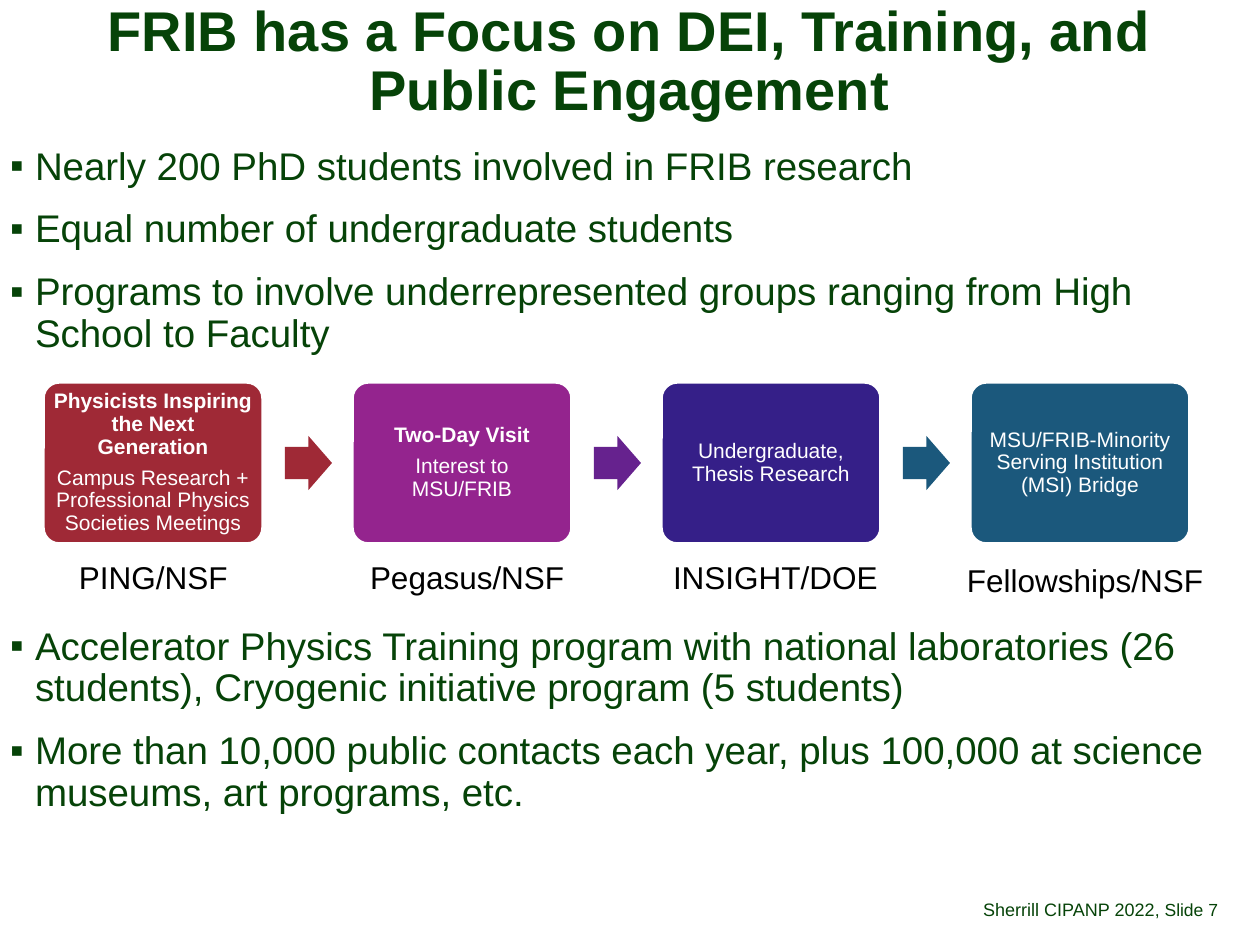
from dataclasses import dataclass

from lxml import etree
from pptx import Presentation
from pptx.dml.color import RGBColor
from pptx.enum.shapes import MSO_SHAPE
from pptx.enum.text import MSO_ANCHOR, MSO_AUTO_SIZE, PP_ALIGN
from pptx.oxml.ns import qn
from pptx.util import Emu, Pt

LEFT, CENTER, RIGHT = PP_ALIGN.LEFT, PP_ALIGN.CENTER, PP_ALIGN.RIGHT
TOP, MIDDLE, BOTTOM = MSO_ANCHOR.TOP, MSO_ANCHOR.MIDDLE, MSO_ANCHOR.BOTTOM
ROUND_RECT, RIGHT_ARROW = MSO_SHAPE.ROUNDED_RECTANGLE, MSO_SHAPE.RIGHT_ARROW
NO_FIT = MSO_AUTO_SIZE.NONE

COLORS = {
    "green": "064308",
    "white": "FFFFFF",
    "black": "000000",
    "red": "9F2936",
    "magenta": "94248E",
    "purple": "66228E",
    "indigo": "351F88",
    "blue": "1B587C",
}
FONT = "Arial"
PX_PER_INCH = 126
STAGE_LEFT, STAGE_TOP, STAGE_W, STAGE_H, STAGE_PITCH = 43, 382, 220, 162, 309
ARROW_OFFSET, ARROW_W, ARROW_H = 242, 47, 54
BULLET_INDENT = 25


@dataclass
class Box:
    x: int
    y: int
    w: int
    h: int


@dataclass
class Stage:
    heading: str
    detail: str
    color: str
    label: str
    label_box: Box
    arrow_color: str = ""


STAGES = [
    Stage("Physicists Inspiring the Next Generation",
          "Campus Research + Professional Physics Societies Meetings",
          "red", "PING/NSF", Box(66, 552, 175, 50), "red"),
    Stage("Two-Day Visit", "Interest to MSU/FRIB",
          "magenta", "Pegasus/NSF", Box(357, 552, 222, 50), "purple"),
    Stage("", "Undergraduate, Thesis Research",
          "indigo", "INSIGHT/DOE", Box(660, 552, 232, 50), "blue"),
    Stage("", "MSU/FRIB-Minority Serving Institution (MSI) Bridge",
          "blue", "Fellowships/NSF", Box(954, 555, 265, 50)),
]
UPPER_POINTS = [
    "Nearly 200 PhD students involved in FRIB research",
    "Equal number of undergraduate students",
    "Programs to involve underrepresented groups ranging from High School to Faculty",
]
LOWER_POINTS = [
    "Accelerator Physics Training program with national laboratories "
    "(26 students), Cryogenic initiative program (5 students)",
    "More than 10,000 public contacts each year, plus 100,000 at science "
    "museums, art programs, etc.",
]


def px(n: float) -> Emu:
    return Emu(round(n * 914400 / PX_PER_INCH))


def rgb(name: str) -> RGBColor:
    return RGBColor.from_string(COLORS[name])


def add_bullet(p) -> None:
    pPr = p._p.get_or_add_pPr()
    pPr.set("marL", str(px(BULLET_INDENT)))
    pPr.set("indent", str(-px(BULLET_INDENT)))
    etree.SubElement(pPr, qn("a:buFont"), typeface=FONT)
    etree.SubElement(pPr, qn("a:buChar"), char="▪")


def write(tf, lines: list[str], *, size: float, color: str = "green",
          bold_lines: int = 0, align=LEFT, anchor=TOP, spacing: float = 0.9,
          gap: float = 0, inset: tuple[int, int] = (0, 0),
          wrap: bool = True, bullets: bool = False) -> None:
    tf.word_wrap, tf.auto_size, tf.vertical_anchor = wrap, NO_FIT, anchor
    tf.margin_left = tf.margin_right = px(inset[0])
    tf.margin_top = tf.margin_bottom = px(inset[1])
    for i, line in enumerate(lines):
        p = tf.add_paragraph() if i else tf.paragraphs[0]
        p.alignment, p.line_spacing = align, spacing
        p.space_before = Pt(gap if i else 0)
        if bullets:
            add_bullet(p)
        r = p.add_run()
        r.text = line
        r.font.name, r.font.size = FONT, Pt(size)
        r.font.bold = i < bold_lines
        r.font.color.rgb = rgb(color)


def add_text(s, box: Box, lines: list[str], **fmt) -> None:
    sp = s.shapes.add_textbox(px(box.x), px(box.y), px(box.w), px(box.h))
    write(sp.text_frame, lines, **fmt)


def add_filled(s, kind, box: Box, color: str, adjustments: list[float]):
    sp = s.shapes.add_shape(kind, px(box.x), px(box.y), px(box.w), px(box.h))
    sp.shadow.inherit = False
    sp.fill.solid()
    sp.fill.fore_color.rgb = rgb(color)
    sp.line.fill.background()
    for i, value in enumerate(adjustments):
        sp.adjustments[i] = value
    return sp


def add_stage(s, index: int, stage: Stage) -> None:
    x = STAGE_LEFT + index * STAGE_PITCH
    sp = add_filled(s, ROUND_RECT, Box(x, STAGE_TOP, STAGE_W, STAGE_H), stage.color, [0.1])
    sp.line.color.rgb = rgb("white")
    sp.line.width = Pt(2)
    lines = [line for line in (stage.heading, stage.detail) if line]
    write(sp.text_frame, lines, size=12, color="white", bold_lines=len(lines) - 1,
          align=CENTER, anchor=MIDDLE, gap=4.8, inset=(6, 6))
    if stage.arrow_color:
        y = STAGE_TOP + (STAGE_H - ARROW_H) // 2
        add_filled(s, RIGHT_ARROW, Box(x + ARROW_OFFSET, y, ARROW_W, ARROW_H),
                   stage.arrow_color, [0.6, 0.5])
    add_text(s, stage.label_box, [stage.label], size=18, color="black",
             spacing=1.0, inset=(13, 6), wrap=False)


def main() -> None:
    prs = Presentation()
    prs.slide_width, prs.slide_height = px(1260), px(945)
    s = prs.slides.add_slide(prs.slide_layouts[5])

    title = s.shapes.title
    title.left, title.top, title.width, title.height = px(10), px(0), px(1239), px(126)
    write(title.text_frame, ["FRIB has a Focus on DEI, Training, and Public Engagement"],
          size=32, bold_lines=1, align=CENTER, anchor=MIDDLE, spacing=0.88, inset=(8, 3))

    for box, points in ((Box(10, 147, 1239, 220), UPPER_POINTS),
                        (Box(10, 627, 1239, 213), LOWER_POINTS)):
        add_text(s, box, points, size=22, gap=12.1, bullets=True)

    for i, stage in enumerate(STAGES):
        add_stage(s, i, stage)

    add_text(s, Box(571, 876, 584, 50), ["Sherrill CIPANP 2022"], size=10.3,
             align=RIGHT, anchor=BOTTOM, inset=(0, 6))
    add_text(s, Box(1155, 876, 105, 50), [", Slide 7"], size=10,
             anchor=BOTTOM, inset=(0, 6))

    prs.save("out.pptx")


if __name__ == "__main__":
    main()
